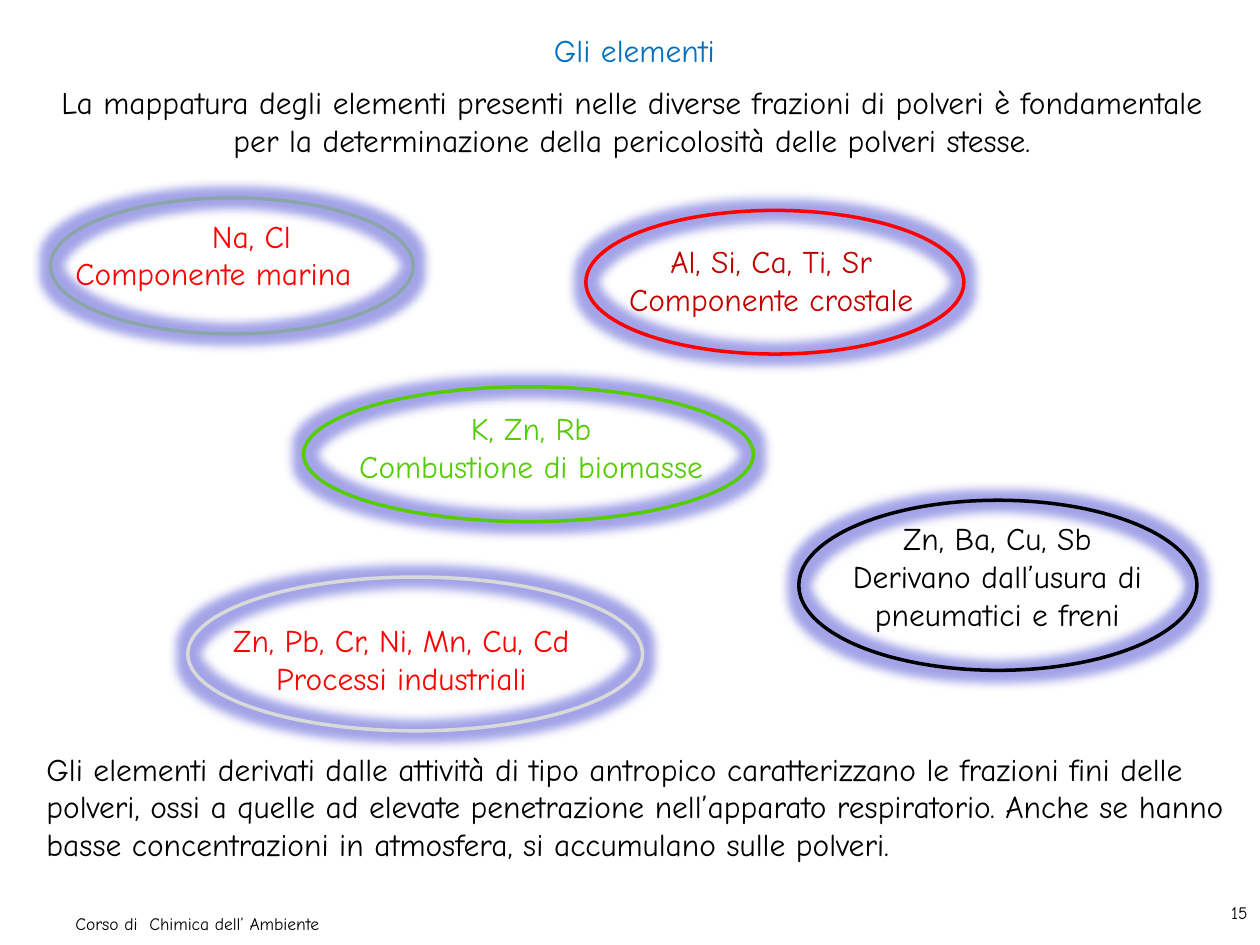
from lxml import etree
from pptx import Presentation
from pptx.dml.color import RGBColor
from pptx.enum import shapes, text
from pptx.oxml import ns
from pptx.util import Inches, Pt

COLORS = {
    "black": "000000",
    "blue": "0070C0",
    "red": "FF0000",
    "dark_red": "C00000",
    "green": "55CC04",
    "teal": "8AA6A8",
    "silver": "D9D9D9",
    "glow": "3333CC",
}
LEFT, CENTER, RIGHT = text.PP_ALIGN.LEFT, text.PP_ALIGN.CENTER, text.PP_ALIGN.RIGHT


class ElementsPage:
    font_name = "Comic Neue"
    line_width = 2
    glow_radius = 11
    glow_alpha = 45

    def __init__(self, deck):
        self.page = deck.slides.add_slide(deck.slide_layouts[6])

    def text_box(self, place, lines, color="black", size=18, aligns=(CENTER,)):
        box = self.page.shapes.add_textbox(*map(Inches, place))
        frame = box.text_frame
        frame.word_wrap = True
        style = {"name": self.font_name, "size": Pt(size)}
        for index, line in enumerate(lines):
            para = frame.paragraphs[0] if index == 0 else frame.add_paragraph()
            para.alignment = aligns[min(index, len(aligns) - 1)]
            span = para.add_run()
            span.text = line
            for name, value in style.items():
                setattr(span.font, name, value)
            span.font.color.rgb = RGBColor.from_string(COLORS[color])

    def glowing_ellipse(self, place, color):
        ellipse = self.page.shapes.add_shape(
            shapes.MSO_SHAPE.OVAL, *map(Inches, place)
        )
        ellipse.shadow.inherit = False
        ellipse.fill.background()
        ellipse.line.color.rgb = RGBColor.from_string(COLORS[color])
        ellipse.line.width = Pt(self.line_width)
        effects = ellipse.element.spPr.find(ns.qn("a:effectLst"))
        glow = etree.SubElement(
            effects, ns.qn("a:glow"), rad=str(Pt(self.glow_radius))
        )
        tint = etree.SubElement(glow, ns.qn("a:srgbClr"), val=COLORS["glow"])
        etree.SubElement(tint, ns.qn("a:alpha"), val=str(self.glow_alpha * 1000))


def main():
    deck = Presentation()
    deck.slide_width, deck.slide_height = Inches(10), Inches(7.5)
    page = ElementsPage(deck)

    page.text_box((9.5, 7.11, 0.5, 0.34), ["15"], size=10, aligns=(RIGHT,))
    page.text_box(
        (0.5, 7.2, 4.18, 0.34),
        ["Corso di  Chimica dell’ Ambiente"],
        size=10,
        aligns=(LEFT,),
    )
    page.text_box((2.82, 0.2, 4.43, 0.4), ["Gli elementi"], "blue")
    page.text_box(
        (0.31, 0.61, 9.41, 0.71),
        [
            "La mappatura degli elementi presenti nelle diverse frazioni di polveri "
            "è fondamentale per la determinazione della pericolosità delle polveri "
            "stesse."
        ],
    )

    sources = [
        ((0.5, 1.67, 2.99, 0.71), ["Na, Cl", "Componente marina"],
         "red", (CENTER, LEFT)),
        ((4.68, 1.87, 2.88, 0.71), ["Al, Si, Ca, Ti, Sr", "Componente crostale"],
         "dark_red", (CENTER,)),
        ((2.42, 3.2, 3.59, 0.71), ["K, Zn, Rb", "Combustione di biomasse"],
         "green", (CENTER,)),
        ((6.12, 4.07, 3.59, 1.01),
         ["Zn, Ba, Cu, Sb", "Derivano dall’usura di pneumatici e freni"],
         "black", (CENTER,)),
        ((1.39, 4.88, 3.59, 0.71),
         ["Zn, Pb, Cr, Ni, Mn, Cu, Cd", "Processi industriali"],
         "red", (CENTER,)),
    ]
    for place, lines, color, aligns in sources:
        page.text_box(place, lines, color, aligns=aligns)

    page.text_box(
        (0.27, 5.9, 9.7, 1.01),
        [
            "Gli elementi derivati dalle attività di tipo antropico caratterizzano "
            "le frazioni fini delle polveri, ossi a quelle ad elevate penetrazione "
            "nell’apparato respiratorio. Anche se hanno basse concentrazioni in "
            "atmosfera, si accumulano sulle polveri."
        ],
        aligns=(LEFT,),
    )

    outlines = [
        ((0.4, 1.57, 2.88, 1.08), "teal"),
        ((4.65, 1.67, 3, 1.14), "red"),
        ((2.41, 3.07, 3.57, 1.07), "green"),
        ((1.49, 4.58, 3.61, 1.22), "silver"),
        ((6.34, 3.97, 3.16, 1.35), "black"),
    ]
    for place, color in outlines:
        page.glowing_ellipse(place, color)

    deck.save("out.pptx")


if __name__ == "__main__":
    main()
